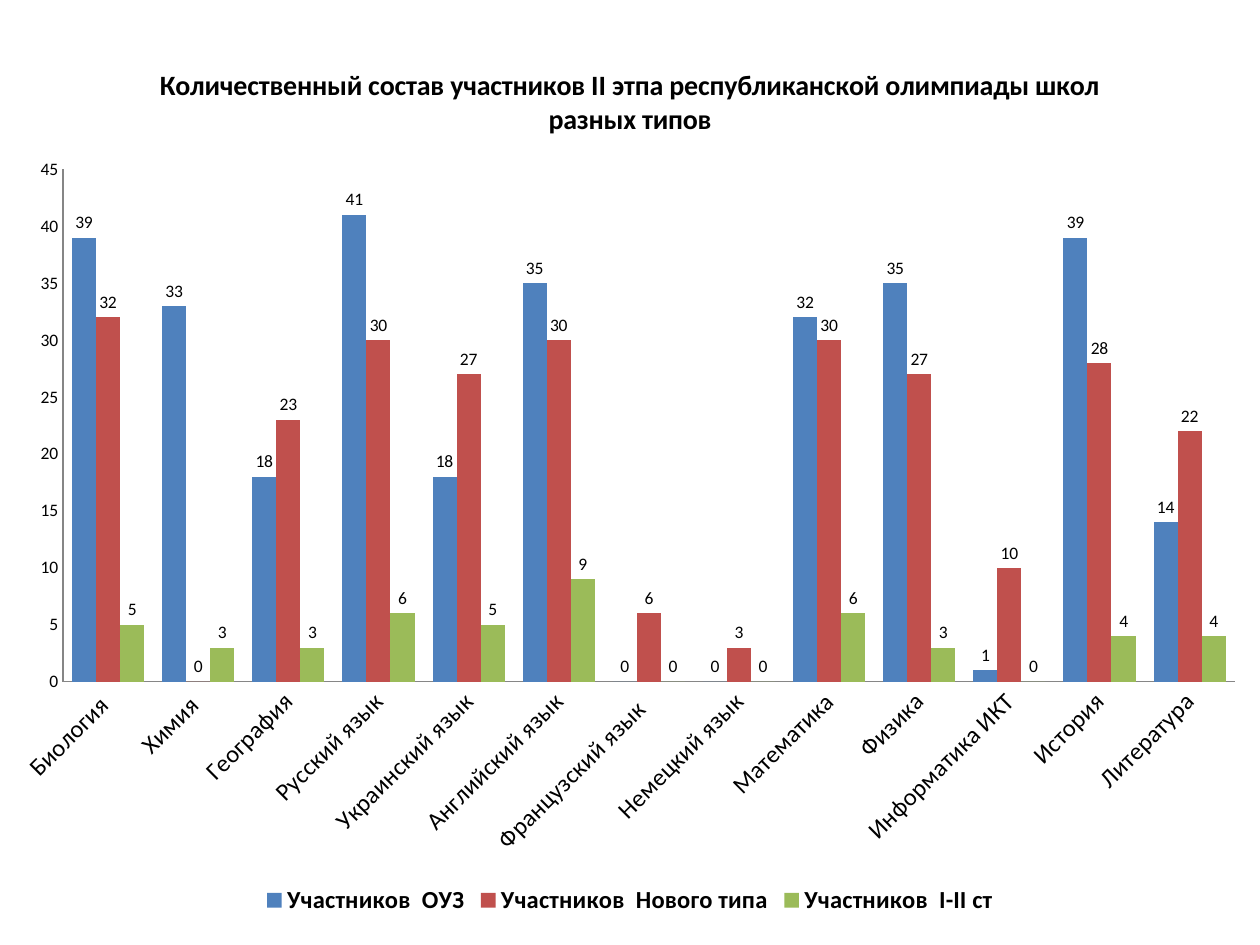
from lxml import etree
from pptx import Presentation
from pptx.chart.data import CategoryChartData
from pptx.dml.color import RGBColor
from pptx.enum.chart import (XL_CHART_TYPE, XL_LABEL_POSITION,
                             XL_LEGEND_POSITION, XL_TICK_MARK)
from pptx.oxml.ns import qn
from pptx.util import Pt

COLUMNS = XL_CHART_TYPE.COLUMN_CLUSTERED
OUTSIDE_END = XL_LABEL_POSITION.OUTSIDE_END
BOTTOM = XL_LEGEND_POSITION.BOTTOM
NO_TICKS = XL_TICK_MARK.NONE

BLACK = RGBColor(0x00, 0x00, 0x00)
AXIS_GREY = RGBColor(0x86, 0x86, 0x86)
BLUE = RGBColor(0x4F, 0x81, 0xBD)
RED = RGBColor(0xC0, 0x50, 0x4D)
GREEN = RGBColor(0x9B, 0xBB, 0x59)

FONT = "Calibri"
TITLE = ("Количественный состав участников II этпа республиканской "
         "олимпиады школ разных типов")
SUBJECTS = ["Биология ", "Химия ", "География", "Русский язык",
            "Украинский язык", "Английский язык", "Французский язык  ",
            "Немецкий язык", "Математика", "Физика", "Информатика ИКТ",
            "История", "Литература"]
PARTICIPANTS = [
    ("Участников  ОУЗ", BLUE,
     [39, 33, 18, 41, 18, 35, 0, 0, 32, 35, 1, 39, 14]),
    ("Участников  Нового типа", RED,
     [32, 0, 23, 30, 27, 30, 6, 3, 30, 27, 10, 28, 22]),
    ("Участников  І-ІІ ст", GREEN,
     [5, 3, 3, 6, 5, 9, 0, 0, 6, 3, 0, 4, 4]),
]


def style_font(font, size, bold=False):
    font.name = FONT
    font.size = Pt(size)
    font.bold = bold
    font.color.rgb = BLACK


def add_participants_chart(slide):
    data = CategoryChartData(number_format="General")
    data.categories = SUBJECTS
    for name, _, counts in PARTICIPANTS:
        data.add_series(name, counts)
    frame = slide.shapes.add_chart(COLUMNS, Pt(0), Pt(21), Pt(720), Pt(505), data)
    style_font(frame.chart.font, 10)
    return frame.chart


def set_title(chart):
    chart.has_title = True
    chart.chart_title.include_in_layout = False
    run = chart.chart_title.text_frame.paragraphs[0].add_run()
    run.text = TITLE
    style_font(run.font, 16, bold=True)


def style_columns(plot):
    plot.gap_width = 75
    plot.overlap = 0
    plot.vary_by_categories = False
    for series, (_, color, _) in zip(plot.series, PARTICIPANTS):
        series.invert_if_negative = False
        series.format.fill.solid()
        series.format.fill.fore_color.rgb = color
        labels = series.data_labels
        labels.show_value = True
        labels.position = OUTSIDE_END
        style_font(labels.font, 10)


def style_axis(axis, label_size):
    axis.has_major_gridlines = False
    axis.major_tick_mark = NO_TICKS
    axis.minor_tick_mark = NO_TICKS
    axis.format.line.color.rgb = AXIS_GREY
    axis.format.line.width = Pt(0.75)
    style_font(axis.tick_labels.font, label_size)


def style_axes(chart):
    subjects, counts = chart.category_axis, chart.value_axis
    style_axis(subjects, 14)
    style_axis(counts, 10)
    counts.minimum_scale, counts.maximum_scale, counts.major_unit = 0, 45, 5
    label_body = subjects._element.find(qn("c:txPr")).find(qn("a:bodyPr"))
    label_body.set("rot", "-2700000")
    label_body.set("vert", "horz")


def set_legend(chart):
    chart.has_legend = True
    chart.legend.position = BOTTOM
    chart.legend.include_in_layout = False
    style_font(chart.legend.font, 14, bold=True)


def place_plot_area(chart, x, y, w, h):
    """Fix the inner plot area, in fractions of the chart's size."""
    plot_area = chart._chartSpace.chart.plotArea
    for old_layout in plot_area.findall(qn("c:layout")):
        plot_area.remove(old_layout)
    layout = etree.Element(qn("c:layout"))
    manual = etree.SubElement(layout, qn("c:manualLayout"))
    settings = [("layoutTarget", "inner"), ("xMode", "edge"), ("yMode", "edge"),
                ("x", x), ("y", y), ("w", w), ("h", h)]
    for tag, value in settings:
        etree.SubElement(manual, qn(f"c:{tag}")).set("val", str(value))
    plot_area.insert(0, layout)


def main():
    presentation = Presentation()
    presentation.slide_width, presentation.slide_height = Pt(720), Pt(540)
    slide = presentation.slides.add_slide(presentation.slide_layouts[6])
    chart = add_participants_chart(slide)
    set_title(chart)
    style_columns(chart.plots[0])
    style_axes(chart)
    set_legend(chart)
    place_plot_area(chart, 0.05, 0.15, 0.93, 0.58)
    presentation.save("out.pptx")


if __name__ == "__main__":
    main()
